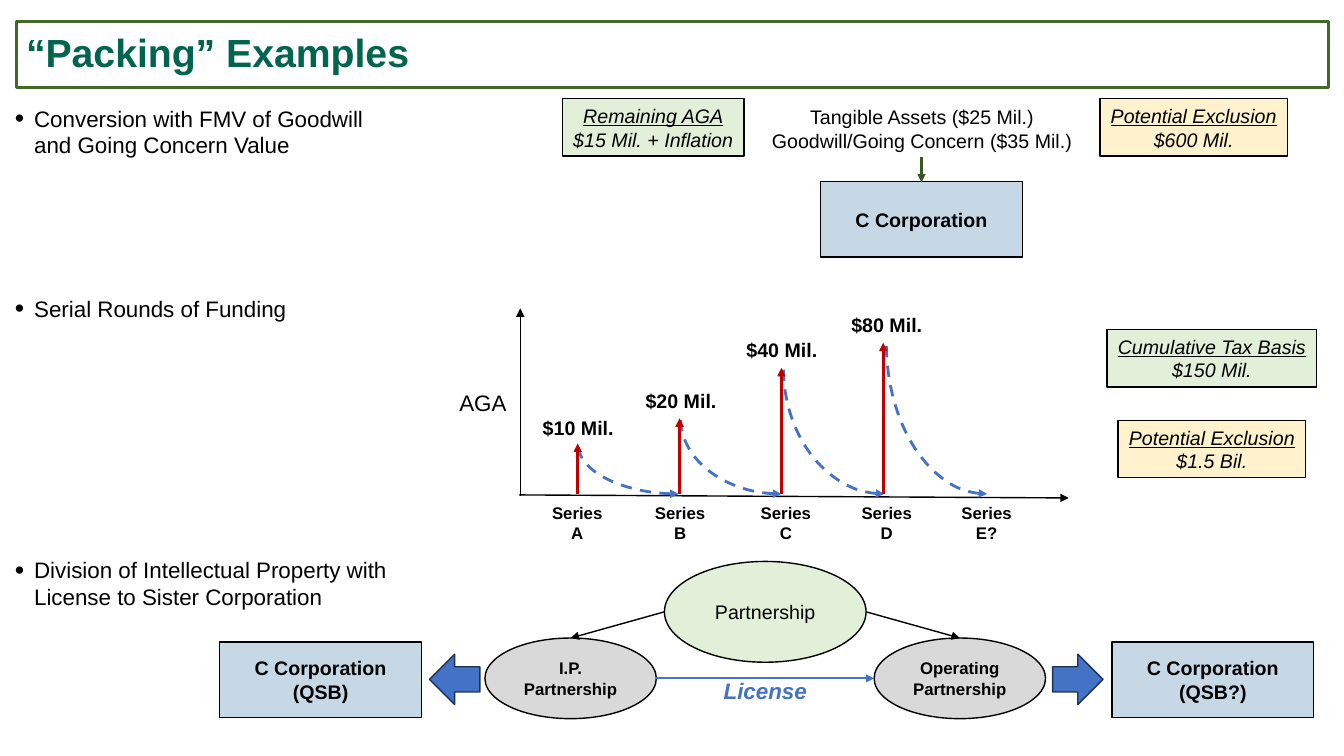
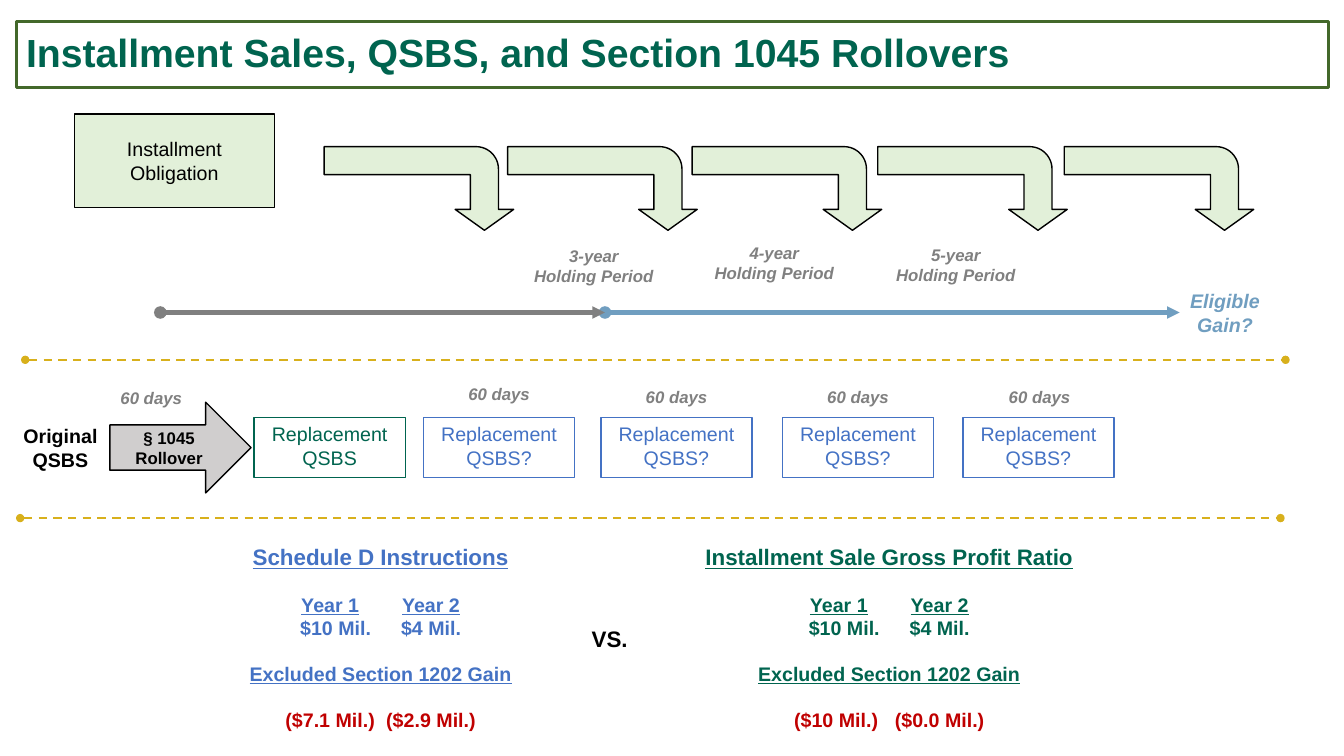
from lxml import etree
from pptx import Presentation
from pptx.dml.color import RGBColor
from pptx.enum.dml import MSO_LINE
from pptx.enum.shapes import MSO_CONNECTOR, MSO_SHAPE
from pptx.enum.text import MSO_ANCHOR, PP_ALIGN
from pptx.oxml.ns import qn
from pptx.util import Pt

PX = 9144
RECT, OVAL, ARC = MSO_SHAPE.RECTANGLE, MSO_SHAPE.OVAL, MSO_SHAPE.ARC
LEFT_ARROW, RIGHT_ARROW = MSO_SHAPE.LEFT_ARROW, MSO_SHAPE.RIGHT_ARROW
BENT_ARROW = MSO_SHAPE.BENT_ARROW
LINE, TEXT = "line", "text"
LEFT, CENTER = PP_ALIGN.LEFT, PP_ALIGN.CENTER
TOP, MIDDLE = MSO_ANCHOR.TOP, MSO_ANCHOR.MIDDLE
BLACK, GREEN, MOSS, BLUE, NAVY = "000000", "00644F", "43682A", "4472C4", "1E3256"
MINT, CREAM, SKY, STEEL = "E2F0D9", "FFF2CC", "C6D8E6", "709EC0"
SILVER, GRAY, RED, GOLD = "D9D9D9", "808080", "C00000", "D8B01C"
BOLD, ITALIC = {"bold": True}, {"italic": True}
BOLD_ITALIC = {"bold": True, "italic": True}
UNDERLINE = {"underline": True}


def add(page, kind, at, fill=None, line=None, width=1, dash=False, head=None, tail=None, rotation=0):
    at = [value * PX for value in at]
    if kind == LINE:
        shape = page.shapes.add_connector(MSO_CONNECTOR.STRAIGHT, *at)
    elif kind == TEXT:
        return page.shapes.add_textbox(*at)
    else:
        shape = page.shapes.add_shape(kind, *at)
        shape.shadow.inherit = False
        shape.rotation = rotation
        if fill:
            shape.fill.solid()
            shape.fill.fore_color.rgb = RGBColor.from_string(fill)
        else:
            shape.fill.background()
    shape.line.color.rgb = RGBColor.from_string(line)
    shape.line.width = Pt(width)
    if dash:
        shape.line.dash_style = MSO_LINE.DASH
    properties = shape.element.spPr
    outline = properties.find(qn("a:ln"))
    for tag, end in (("a:headEnd", head), ("a:tailEnd", tail)):
        if end:
            etree.SubElement(outline, qn(tag)).set("type", end)
    if kind == LINE:
        etree.SubElement(properties, qn("a:effectLst"))
    return shape


def write(box, paragraphs, size=14, color=BLACK, font={}, first={}, align=CENTER, anchor=MIDDLE, wrap=False, inset=None):
    frame = box.text_frame
    frame.word_wrap, frame.vertical_anchor = wrap, anchor
    if inset is not None:
        for side in ("left", "right", "top", "bottom"):
            setattr(frame, "margin_" + side, inset * PX)
    for index, spans in enumerate(paragraphs):
        para = frame.paragraphs[0] if index == 0 else frame.add_paragraph()
        para.alignment = align
        if isinstance(spans, str):
            spans = [(spans, {})]
        for words, changes in spans:
            span = para.add_run()
            span.text = words
            look = {"name": "Arial", "size": size, "color": color, **font, **changes}
            if index == 0:
                look.update(first)
            span.font.color.rgb = RGBColor.from_string(look.pop("color"))
            look["size"] = Pt(look["size"])
            for name, value in look.items():
                setattr(span.font, name, value)
    return frame


deck = Presentation()
deck.slide_width, deck.slide_height = 1333 * PX, 750 * PX
pages = []
for title in ("“Packing” Examples", "Installment Sales, QSBS, and Section 1045 Rollovers"):
    page = deck.slides.add_slide(deck.slide_layouts[6])
    box = add(page, RECT, (16, 21, 1302, 66), line=MOSS, width=2)
    frame = write(box, [title], 28, GREEN, BOLD, align=LEFT, wrap=True)
    frame.paragraphs[0].line_spacing = 0.9
    pages.append(page)
packing, rollovers = pages

for top, width, words in (
    (99, 368, "Conversion with FMV of Goodwill and Going Concern Value"),
    (288, 325, "Serial Rounds of Funding"),
    (547, 393, "Division of Intellectual Property with License to Sister Corporation"),
):
    box = add(packing, TEXT, (5, top, width, 64))
    frame = write(box, [words], 16, align=LEFT, anchor=TOP, wrap=True)
    indent = frame.paragraphs[0]._p.get_or_add_pPr()
    indent.set("marL", str(19 * PX))
    indent.set("indent", str(-19 * PX))
    for tag, name, value in (
        ("a:buSzPct", "val", "120000"),
        ("a:buFont", "typeface", "Arial"),
        ("a:buChar", "char", "•"),
    ):
        etree.SubElement(indent, qn(tag)).set(name, value)

for at, fill, words in (
    ((558, 98, 180, 57), MINT, ("Remaining AGA", "$15 Mil. + Inflation")),
    ((1091, 98, 186, 57), CREAM, ("Potential Exclusion", "$600 Mil.")),
    ((1098, 327, 208, 57), MINT, ("Cumulative Tax Basis", "$150 Mil.")),
    ((1109, 417, 186, 57), CREAM, ("Potential Exclusion", "$1.5 Bil.")),
):
    write(add(packing, RECT, at, fill, BLACK), words, font=ITALIC, first=UNDERLINE)

for left, top, words in (
    (814, 180, ["C Corporation"]),
    (218, 637, ["C Corporation", "(QSB)"]),
    (1103, 637, ["C Corporation", "(QSB?)"]),
):
    write(add(packing, RECT, (left, top, 200, 75), SKY, BLACK), words, font=BOLD)

assets = add(packing, TEXT, (755, 99, 319, 57))
write(assets, ["Tangible Assets ($25 Mil.)", "Goodwill/Going Concern ($35 Mil.)"])
add(packing, LINE, (914, 156, 914, 181), line="385723", width=1.5, tail="triangle")

add(packing, LINE, (515, 491, 1060, 494), line=BLACK, tail="triangle")
add(packing, LINE, (516, 492, 516, 306), line=BLACK, tail="triangle")
write(add(packing, TEXT, (445, 381, 68, 37)), ["AGA"], 16)
for index, (peak, left, top, amount) in enumerate((
    (440, 528, 407, "$10 Mil."),
    (415, 630, 380, "$20 Mil."),
    (365, 730, 330, "$40 Mil."),
    (340, 834, 305, "$80 Mil."),
)):
    height = 2 * (490 - peak)
    add(packing, ARC, (573 + 102 * index, 490 - height, 200, height),
        line=BLUE, width=2, dash=True, head="triangle", rotation=180)
    x = 573 + 101 * index
    add(packing, LINE, (x, 490, x, peak), line=RED, width=2, tail="triangle")
    write(add(packing, TEXT, (left, top, 91, 34)), [amount], font=BOLD)
for left, letter in zip((537, 639, 744, 844, 943), ("A", "B", "C", "D", "E?")):
    write(add(packing, TEXT, (left, 494, 71, 50)), ["Series", letter], 12, font=BOLD, anchor=TOP)

partnership = add(packing, OVAL, (659, 557, 200, 100), MINT, BLACK)
write(partnership, ["Partnership"], wrap=True, inset=5)
for left, words in ((481, "I.P."), (867, "Operating")):
    box = add(packing, OVAL, (left, 633, 170, 80), SILVER, BLACK)
    write(box, [words, "Partnership"], 12, font=BOLD, wrap=True, inset=5)
for at, color, width in (
    ((659, 607, 566, 633), BLACK, 1),
    ((859, 607, 952, 633), BLACK, 1),
    ((651, 673, 867, 673), BLUE, 1.5),
):
    add(packing, LINE, at, line=color, width=width, tail="triangle")
write(add(packing, TEXT, (707, 667, 104, 37)), ["License"], 16, BLUE, BOLD_ITALIC)
for kind, left in ((LEFT_ARROW, 426), (RIGHT_ARROW, 1044)):
    add(packing, kind, (left, 649, 50, 50), BLUE, NAVY)

obligation = add(rollovers, RECT, (74, 113, 198, 93), MINT, BLACK)
write(obligation, ["Installment", "Obligation"], wrap=True, inset=5)
for left in (374, 556, 739, 923, 1108):
    arrow = add(rollovers, BENT_ARROW, (left, 93, 83, 188), MINT, BLACK, rotation=90)
    for index, value in enumerate((0.335, 0.35, 0.25, 0.267)):
        arrow.adjustments[index] = value

for at, color, width, dash, tail in (
    ((600, 310, 1170, 310), STEEL, 3, False, "triangle"),
    ((159, 310, 600, 310), GRAY, 3, False, "triangle"),
    ((25, 357, 1275, 357), GOLD, 1.5, True, "oval"),
    ((20, 514, 1270, 514), GOLD, 1.5, True, "oval"),
):
    add(rollovers, LINE, at, line=color, width=width, dash=dash, head="oval", tail=tail)
for left, top, years in ((519, 239, "3-year"), (698, 236, "4-year"), (878, 238, "5-year")):
    box = add(rollovers, TEXT, (left, top, 140, 50))
    write(box, [years, "Holding Period"], 12, GRAY, BOLD_ITALIC, anchor=TOP)
eligible = add(rollovers, TEXT, (1170, 282, 90, 57))
write(eligible, ["Eligible", "Gain?"], color=STEEL, font=BOLD_ITALIC, anchor=TOP)

original = add(rollovers, TEXT, (13, 416, 94, 57))
write(original, ["Original", "QSBS"], font=BOLD, anchor=TOP)
rollover = add(rollovers, RIGHT_ARROW, (109, 399, 140, 90), "D0CECE", BLACK)
write(rollover, ["§ 1045 Rollover"], 12, font=BOLD, wrap=True, inset=5)
for left, top in ((109, 380), (454, 376), (630, 379), (810, 379), (990, 379)):
    box = add(rollovers, TEXT, (left, top, 82, 30))
    write(box, ["60 days"], 12, GRAY, BOLD_ITALIC, anchor=TOP)
for left, color, stock in (
    (252, GREEN, "QSBS"),
    (420, BLUE, "QSBS?"),
    (596, BLUE, "QSBS?"),
    (776, BLUE, "QSBS?"),
    (955, BLUE, "QSBS?"),
):
    box = add(rollovers, RECT, (left, 414, 150, 60), line=color)
    write(box, ["Replacement", stock], color=color, anchor=TOP)

for left, width, color, heading, gains in (
    (237, 281, BLUE, "Schedule D Instructions", "($7.1 Mil.)\t($2.9 Mil.)"),
    (687, 390, GREEN, "Installment Sale Gross Profit Ratio", "($10 Mil.)\t($0.0 Mil.)"),
):
    frame = write(add(rollovers, TEXT, (left, 534, width, 202)), [
        heading,
        [("Year 1", UNDERLINE), ("\t", {}), ("Year 2", UNDERLINE)],
        "$10 Mil.\t$4 Mil.",
        [("Excluded Section 1202 Gain", UNDERLINE)],
        [(gains, {"color": RED})],
    ], color=color, font=BOLD, first={"size": 16, **UNDERLINE}, anchor=TOP)
    for index in (1, 3, 4):
        frame.paragraphs[index].space_before = Pt(16)
write(add(rollovers, TEXT, (577, 615, 56, 37)), ["VS."], 16, font=BOLD, align=LEFT, anchor=TOP)

deck.save("out.pptx")
